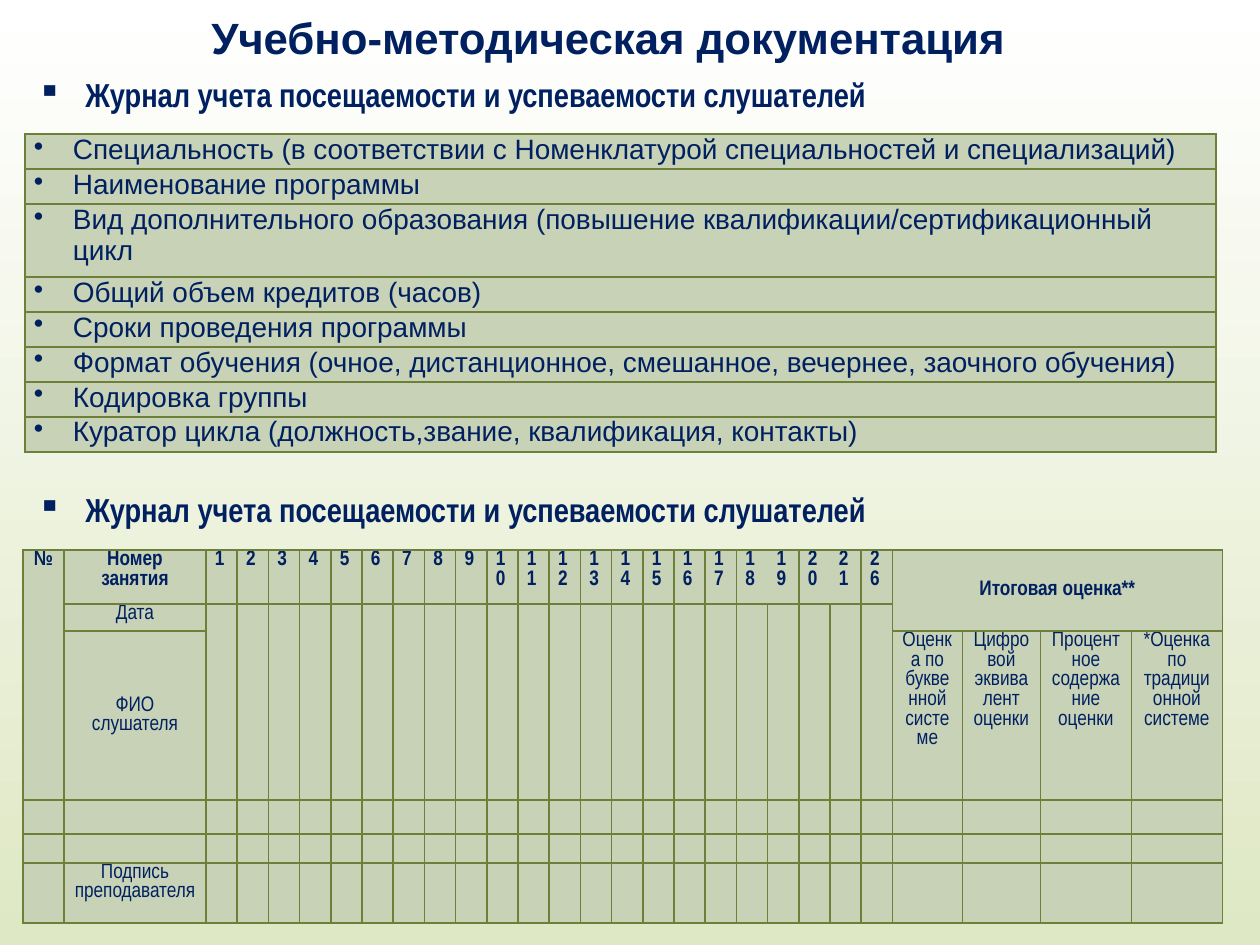
from lxml import etree
from pptx import Presentation
from pptx.dml.color import RGBColor
from pptx.enum.text import MSO_ANCHOR, PP_ALIGN
from pptx.oxml.ns import qn
from pptx.util import Pt

PX = 914400 / 126
LEFT, CENTER = PP_ALIGN.LEFT, PP_ALIGN.CENTER
TOP, MIDDLE = MSO_ANCHOR.TOP, MSO_ANCHOR.MIDDLE
COLORS = {"text": "002060", "cell": "C7D2B7", "border": "6D7F39",
          "bg_top": "FFFFFF", "bg_bottom": "DFE8C4"}
RGB = {name: RGBColor.from_string(value) for name, value in COLORS.items()}


def format_paragraph(p, size, font, bold=False, align=LEFT, bullet=None, indent=0):
    p.alignment = align
    p.font.size, p.font.name, p.font.bold = Pt(size), font, bold
    p.font.color.rgb = RGB["text"]
    if bullet:
        pPr = p._p.get_or_add_pPr()
        pPr.set("marL", str(round(indent * PX)))
        pPr.set("indent", str(round(-indent * PX)))
        bu = etree.Element(qn("a:buChar"), char=bullet)
        pPr.find(qn("a:defRPr")).addprevious(bu)
    if not p.runs:
        etree.SubElement(p._p, qn("a:endParaRPr"), sz=str(size * 100))


def add_grid(slide, left, top, cols, rows, open_sides=()):
    """Add a filled, bordered table; open_sides holds (row, column, side) without a line."""
    frame = slide.shapes.add_table(len(rows), len(cols), round(left * PX), round(top * PX),
                                   round(sum(cols) * PX), round(sum(rows) * PX))
    table = frame.table
    table.first_row = table.horz_banding = False
    for col, width in zip(table.columns, cols):
        col.width = round(width * PX)
    for row, height in zip(table.rows, rows):
        row.height = round(height * PX)
    for r in range(len(rows)):
        for c in range(len(cols)):
            cell = table.cell(r, c)
            cell.margin_left = cell.margin_right = round(9 * PX)
            cell.margin_top = cell.margin_bottom = 0
            tcPr = cell._tc.get_or_add_tcPr()
            for side in "LRTB":
                ln = etree.SubElement(tcPr, qn("a:ln" + side), w=str(Pt(1)))
                if (r, c, side) in open_sides:
                    etree.SubElement(ln, qn("a:noFill"))
                else:
                    fill = etree.SubElement(ln, qn("a:solidFill"))
                    etree.SubElement(fill, qn("a:srgbClr"), val=COLORS["border"])
            cell.fill.solid()
            cell.fill.fore_color.rgb = RGB["cell"]
            cell.text_frame.paragraphs[0].line_spacing = 1.07
    return table


prs = Presentation()
prs.slide_width, prs.slide_height = round(1260 * PX), round(945 * PX)
s = prs.slides.add_slide(prs.slide_layouts[5])

# Background
fill = s.background.fill
fill.gradient()
fill.gradient_angle = 270
for stop, name, position in zip(fill.gradient_stops, ("bg_top", "bg_bottom"), (0, 1)):
    stop.color.rgb = RGB[name]
    stop.position = position

# Title
title = s.shapes.title
title.left, title.top = round(48 * PX), round(1 * PX)
title.width, title.height = round(1132 * PX), round(46 * PX)
tf = title.text_frame
tf.text = "Учебно-методическая документация "
tf.vertical_anchor = TOP
tf.margin_top = round(10 * PX)
format_paragraph(tf.paragraphs[0], 25, "Arial", True, CENTER)

# Section headings
for top, width, height in ((65, 863, 59), (483, 1111, 53)):
    sp = s.shapes.add_textbox(round(25 * PX), round(top * PX),
                              round(width * PX), round(height * PX))
    tf = sp.text_frame
    tf.word_wrap = True
    tf.vertical_anchor = MIDDLE
    tf.text = "Журнал учета посещаемости и успеваемости слушателей"
    format_paragraph(tf.paragraphs[0], 19, "Arial Narrow", True, bullet="▪", indent=48)

# Programme details
details = [
    "Специальность (в соответствии с Номенклатурой специальностей и специализаций)",
    "Наименование программы",
    "Вид дополнительного образования (повышение квалификации/сертификационный цикл",
    "Общий объем кредитов (часов)",
    "Сроки проведения программы",
    "Формат обучения (очное, дистанционное, смешанное, вечернее, заочного обучения)",
    "Кодировка группы",
    "Куратор цикла (должность,звание, квалификация, контакты)",
]
table = add_grid(s, 25, 134, [1191], [35, 35, 73, 35, 35, 35, 35, 35])
for r, text in enumerate(details):
    cell = table.cell(r, 0)
    cell.text = text
    format_paragraph(cell.text_frame.paragraphs[0], 16, "Arial", bullet="•", indent=39)

# Attendance journal
lessons = [*range(1, 22), 26]
first, last = 2, 1 + len(lessons)
grade = last + 1
cols = [41, 142] + [31.23] * len(lessons) + [70, 78, 91, 91]
rows = [54, 27, 169, 34, 29, 60]
open_sides = {(0, 19, "R"), (0, 20, "L"), (0, 21, "R"), (0, 22, "L")}
table = add_grid(s, 23, 550, cols, rows, open_sides)

table.cell(0, 0).merge(table.cell(2, 0))
table.cell(0, grade).merge(table.cell(1, grade + 3))
for c in range(first, last + 1):
    table.cell(1, c).merge(table.cell(2, c))

texts = {
    (0, 0): "№", (0, 1): "Номер занятия", (0, grade): "Итоговая оценка**",
    (1, 1): "Дата", (2, 1): "ФИО слушателя", (5, 1): "Подпись преподавателя",
    (2, grade): "Оценка по буквенной системе",
    (2, grade + 1): "Цифровой эквивалент оценки",
    (2, grade + 2): "Процентное содержание оценки",
    (2, grade + 3): "*Оценка по традиционной системе",
}
texts.update({(0, c): str(n) for c, n in enumerate(lessons, first)})
for r in range(len(rows)):
    for c in range(len(cols)):
        cell = table.cell(r, c)
        cell.text = texts.get((r, c), "")
        align = LEFT if first <= c <= last else CENTER
        format_paragraph(cell.text_frame.paragraphs[0], 12, "Arial Narrow", r == 0, align)
for r, c in ((0, grade), (2, 1)):
    table.cell(r, c).vertical_anchor = MIDDLE

prs.save("out.pptx")
